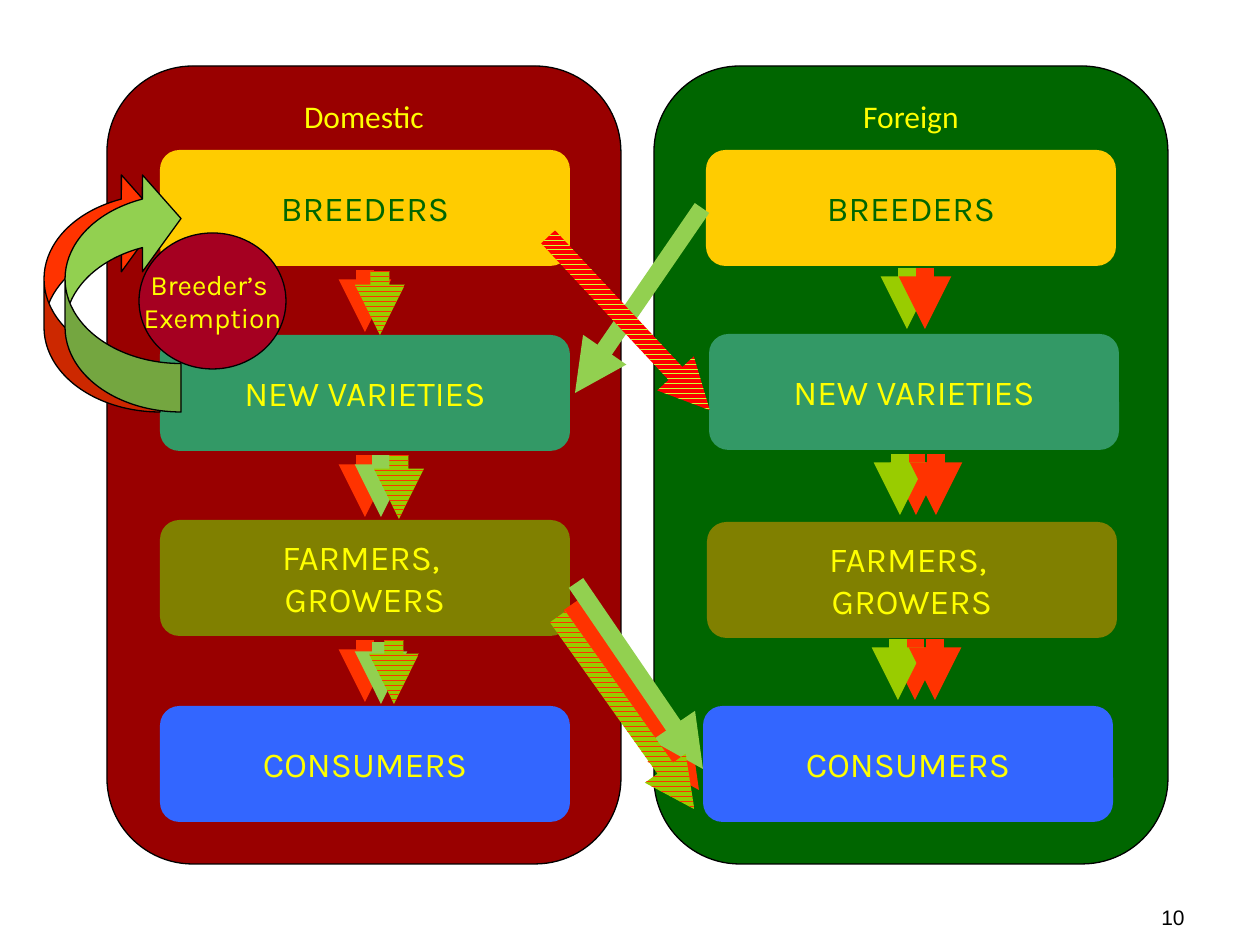
from lxml import etree
from pptx import Presentation
from pptx import util as u
from pptx.dml.color import RGBColor
from pptx.enum import dml, shapes, text
from pptx.oxml import ns

PX = 914400 / 126

BLACK = RGBColor(0x00, 0x00, 0x00)
YELLOW = RGBColor(0xFF, 0xFF, 0x00)
GOLD = RGBColor(0xFF, 0xCC, 0x00)
DARK_GREEN = RGBColor(0x00, 0x66, 0x00)
DARK_RED = RGBColor(0x99, 0x00, 0x00)
CRIMSON = RGBColor(0xA5, 0x00, 0x21)
TEAL = RGBColor(0x33, 0x99, 0x66)
OLIVE = RGBColor(0x80, 0x80, 0x00)
BLUE = RGBColor(0x33, 0x66, 0xFF)
ORANGE_RED = RGBColor(0xFF, 0x33, 0x00)
RED = RGBColor(0xFF, 0x00, 0x00)
LIGHT_GREEN = RGBColor(0x92, 0xD0, 0x50)
LIME = RGBColor(0x99, 0xCC, 0x00)
PALE_LIME = RGBColor(0xCC, 0xFF, 0x33)

# Stages of the chain: label, fill, text colour
STAGES = [
    ("BREEDERS", GOLD, DARK_GREEN),
    ("NEW VARIETIES", TEAL, YELLOW),
    ("FARMERS, \vGROWERS", OLIVE, YELLOW),
    ("CONSUMERS", BLUE, YELLOW),
]
STAGE_SIZE = (410, 116)


def emu(*lengths):
    return [u.Emu(round(length * PX)) for length in lengths]


def write(shape, words, font, size, color, align=text.PP_ALIGN.CENTER,
          anchor=text.MSO_ANCHOR.MIDDLE, wrap=False):
    frame = shape.text_frame
    frame.word_wrap = wrap
    frame.vertical_anchor = anchor
    frame.text = words
    paragraph = frame.paragraphs[0]
    paragraph.alignment = align
    for run in paragraph.runs:
        run.font.name = font
        run.font.size = u.Pt(size)
        run.font.color.rgb = color


def add_block(slide, preset, box, fill, outlined=False, adjust=()):
    block = slide.shapes.add_shape(preset, *emu(*box))
    block.shadow.inherit = False
    for index, value in enumerate(adjust):
        block.adjustments[index] = value
    if fill is not None:
        block.fill.solid()
        block.fill.fore_color.rgb = fill
    if outlined:
        block.line.color.rgb = BLACK
        block.line.width = u.Pt(0.75)
    else:
        block.line.fill.background()
    return block


def add_flow(slide, start, end, color):
    flow = slide.shapes.add_connector(
        shapes.MSO_CONNECTOR.STRAIGHT, *emu(*start, *end))
    flow.line.color.rgb = color
    flow.line.width = u.Pt(10)
    etree.SubElement(flow.line._get_or_add_ln(), ns.qn("a:tailEnd"), type="triangle")
    etree.SubElement(flow._element.spPr, ns.qn("a:effectLst"))


def add_wave_arrow(slide, box, front, back, rotation=0):
    arrow = add_block(slide, shapes.MSO_SHAPE.DOWN_ARROW, box, None,
                      adjust=(0.379, 1.004))
    arrow.fill.patterned()
    arrow.fill.pattern = dml.MSO_PATTERN.WAVE
    arrow.fill.fore_color.rgb = front
    arrow.fill.back_color.rgb = back
    arrow.rotation = rotation


def add_country(slide, box, name, fill, stage_offsets):
    left, top = box[:2]
    rounded = shapes.MSO_SHAPE.ROUNDED_RECTANGLE
    panel = add_block(slide, rounded, box, fill, True, (0.167,))
    write(panel, name, "Calibri", 18, YELLOW, anchor=text.MSO_ANCHOR.TOP)
    for (label, color, ink), (dx, dy) in zip(STAGES, stage_offsets):
        stage = add_block(slide, rounded, (left + dx, top + dy, *STAGE_SIZE),
                          color, adjust=(0.167,))
        write(stage, label, "Karla", 20, ink)


def add_domestic_flows(slide, left, top):
    for dy in (204, 389, 574):
        add_flow(slide, (left + 258, top + dy), (left + 258, top + dy + 62), ORANGE_RED)
    for dy in (389, 576):
        add_flow(slide, (left + 274, top + dy), (left + 274, top + dy + 62), LIGHT_GREEN)
    for dx, dy in ((248, 205), (267, 389), (262, 574)):
        add_wave_arrow(slide, (left + dx, top + dy, 50, 64), ORANGE_RED, LIME)


def add_foreign_flows(slide, left, top):
    flows = [
        (202, [(253, LIME), (271, ORANGE_RED)]),
        (388, [(262, ORANGE_RED), (246, LIME), (282, ORANGE_RED)]),
        (573, [(261, ORANGE_RED), (244, LIME), (281, ORANGE_RED)]),
    ]
    for dy, row in flows:
        for dx, color in row:
            add_flow(slide, (left + dx, top + dy), (left + dx, top + dy + 61), color)


def add_exemption(slide, left, top):
    for dx, color in ((0, ORANGE_RED), (21, LIGHT_GREEN)):
        loop = add_block(slide, shapes.MSO_SHAPE.CURVED_LEFT_ARROW,
                         (left + dx, top, 116, 242), color, True,
                         (0.418, 0.836, 0.333))
        loop.rotation = 180
    badge = add_block(slide, shapes.MSO_SHAPE.OVAL,
                      (left + 95, top + 63, 147, 136), CRIMSON, True)
    write(badge, "Breeder’s \vExemption", "Karla", 16, YELLOW)


def add_trade(slide, left, top):
    # Breeders to new varieties abroad, in both directions
    add_flow(slide, (left + 152, top), (left + 25, top + 185), LIGHT_GREEN)
    add_wave_arrow(slide, (left + 54, top - 3, 50, 237), PALE_LIME, RED, 317)
    # Domestic growers to foreign consumers
    add_flow(slide, (left + 21, top + 397), (left + 149, top + 582), ORANGE_RED)
    add_flow(slide, (left + 26, top + 375), (left + 153, top + 561), LIGHT_GREEN)
    add_wave_arrow(slide, (left + 51, top + 387, 50, 236), ORANGE_RED, LIME, 324.6)


def add_page_number(slide, box):
    number = slide.shapes.add_textbox(*emu(*box))
    write(number, "10", "Arial", 12, BLACK, align=text.PP_ALIGN.RIGHT, wrap=True)


def main():
    deck = Presentation()
    deck.slide_width, deck.slide_height = emu(1260, 945)
    slide = deck.slides.add_slide(deck.slide_layouts[6])
    add_page_number(slide, (903, 892, 294, 50))
    add_country(slide, (654, 66, 514, 798), "Foreign", DARK_GREEN,
                [(52, 84), (55, 268), (53, 456), (49, 640)])
    add_country(slide, (107, 66, 514, 798), "Domestic", DARK_RED,
                [(53, 84), (53, 269), (53, 454), (53, 640)])
    add_domestic_flows(slide, 107, 66)
    add_exemption(slide, 44, 170)
    add_foreign_flows(slide, 654, 66)
    add_trade(slide, 550, 208)
    deck.save("out.pptx")


if __name__ == "__main__":
    main()
